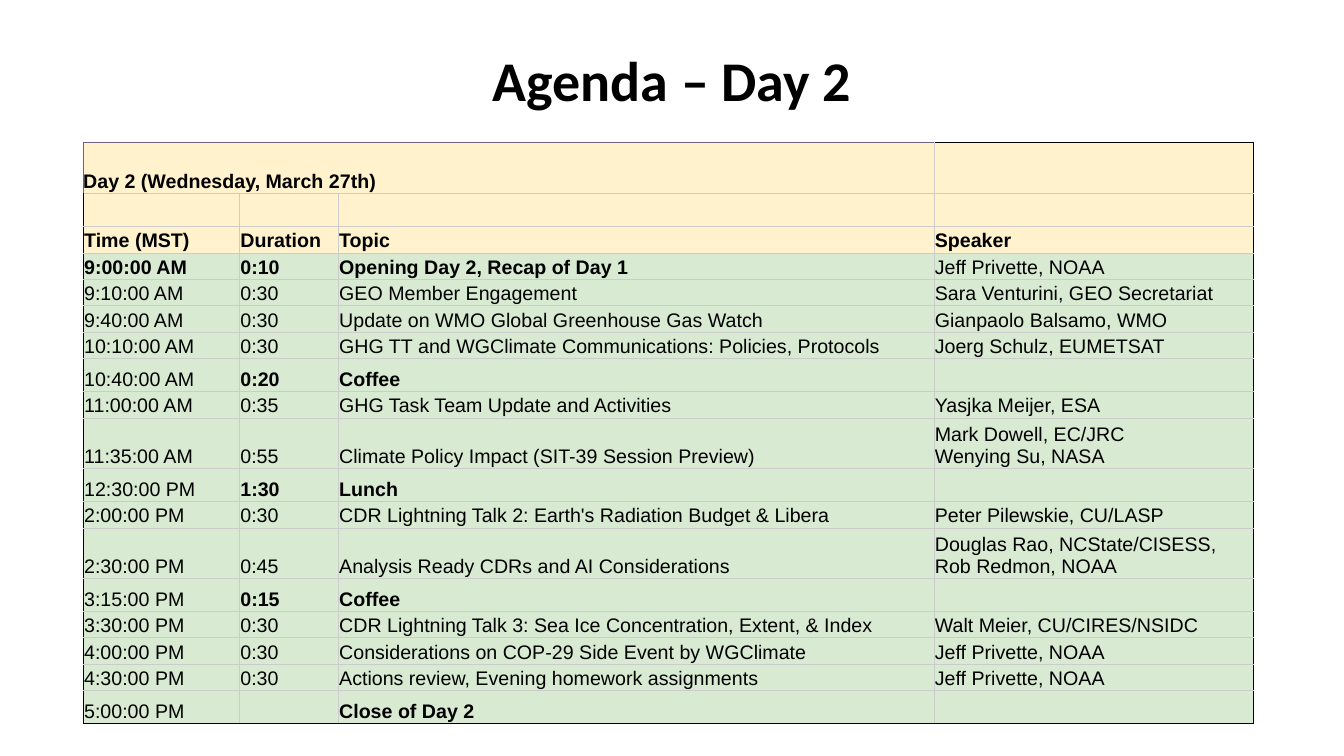
from lxml import etree
from pptx import Presentation
from pptx import util as u
from pptx.dml.color import RGBColor
from pptx.enum import text
from pptx.oxml.ns import qn

THEME = {
    "ink": "000000", "grid": "CCCCCC", "accent": "706286",
    "header": "FFF2CC", "body": "D9EAD3",
    "title_font": "Calibri", "table_font": "Arial",
    "title_size": 40, "table_size": 14,
}

SINGLE, BREAK, DOUBLE, BANNER = 18.9, 23.6, 36, 36.5
COL_WIDTHS = [111.6, 70.6, 425.5, 228.5]
AGENDA = [
    (BANNER, "Day 2 (Wednesday, March 27th)", "", "", ""),
    (BREAK, "", "", "", ""),
    (SINGLE, "Time (MST)", "Duration", "Topic", "Speaker"),
    (SINGLE, "9:00:00 AM", "0:10", "Opening Day 2, Recap of Day 1", "Jeff Privette, NOAA"),
    (SINGLE, "9:10:00 AM", "0:30", "GEO Member Engagement", "Sara Venturini, GEO Secretariat"),
    (SINGLE, "9:40:00 AM", "0:30", "Update on WMO Global Greenhouse Gas Watch", "Gianpaolo Balsamo, WMO"),
    (SINGLE, "10:10:00 AM", "0:30", "GHG TT and WGClimate Communications: Policies, Protocols",
     "Joerg Schulz, EUMETSAT"),
    (BREAK, "10:40:00 AM", "0:20", "Coffee", ""),
    (SINGLE, "11:00:00 AM", "0:35", "GHG Task Team Update and Activities", "Yasjka Meijer, ESA"),
    (DOUBLE, "11:35:00 AM", "0:55", "Climate Policy Impact (SIT-39 Session Preview)",
     "Mark Dowell, EC/JRC\vWenying Su, NASA"),
    (BREAK, "12:30:00 PM", "1:30", "Lunch", ""),
    (SINGLE, "2:00:00 PM", "0:30", "CDR Lightning Talk 2: Earth's Radiation Budget & Libera",
     "Peter Pilewskie, CU/LASP"),
    (DOUBLE, "2:30:00 PM", "0:45", "Analysis Ready CDRs and AI Considerations",
     "Douglas Rao, NCState/CISESS,\vRob Redmon, NOAA"),
    (BREAK, "3:15:00 PM", "0:15", "Coffee", ""),
    (SINGLE, "3:30:00 PM", "0:30", "CDR Lightning Talk 3: Sea Ice Concentration, Extent, & Index",
     "Walt Meier, CU/CIRES/NSIDC"),
    (SINGLE, "4:00:00 PM", "0:30", "Considerations on COP-29 Side Event by WGClimate", "Jeff Privette, NOAA"),
    (SINGLE, "4:30:00 PM", "0:30", "Actions review, Evening homework assignments", "Jeff Privette, NOAA"),
    (BREAK, "5:00:00 PM", "", "Close of Day 2", ""),
]


def style_run(r, font, size, bold):
    for name, value in {"name": font, "size": u.Pt(size), "bold": bold}.items():
        setattr(r.font, name, value)
    r.font.color.rgb = RGBColor.from_string(THEME["ink"])


def add_border(cell, side, color):
    ln = etree.SubElement(cell._tc.get_or_add_tcPr(), qn(f"a:ln{side}"), w=str(u.Pt(0.5)))
    fill = etree.SubElement(ln, qn("a:solidFill"))
    etree.SubElement(fill, qn("a:srgbClr"), val=color)


prs = Presentation()
prs.slide_width, prs.slide_height = u.Pt(960), u.Pt(540)
s = prs.slides.add_slide(prs.slide_layouts[6])

title = s.shapes.add_textbox(u.Pt(152), u.Pt(11.5), u.Pt(656), u.Pt(90))
tf = title.text_frame
tf.word_wrap = True
tf.vertical_anchor = text.MSO_ANCHOR.MIDDLE
p = tf.paragraphs[0]
p.alignment = text.PP_ALIGN.CENTER
r = p.add_run()
r.text = "Agenda – Day 2"
style_run(r, THEME["title_font"], THEME["title_size"], True)

last_row, last_col = len(AGENDA) - 1, len(COL_WIDTHS) - 1
frame = s.shapes.add_table(len(AGENDA), len(COL_WIDTHS), u.Pt(59.4), u.Pt(101.7),
                           u.Pt(sum(COL_WIDTHS)), u.Pt(sum(row[0] for row in AGENDA)))
table = frame.table
table.first_row = table.horz_banding = False
for column, width in zip(table.columns, COL_WIDTHS):
    column.width = u.Pt(width)

for i, (height, *entries) in enumerate(AGENDA):
    table.rows[i].height = u.Pt(height)
    for j, entry in enumerate(entries):
        cell = table.cell(i, j)
        pad = 0 if i == 0 else 0.7
        for name, value in {"margin_left": u.Pt(pad), "margin_right": u.Pt(pad),
                            "margin_top": u.Pt(0.7), "margin_bottom": u.Pt(0.7),
                            "vertical_anchor": text.MSO_ANCHOR.BOTTOM}.items():
            setattr(cell, name, value)

        grid, ink = THEME["grid"], THEME["ink"]
        left_edge = THEME["accent"] if i == 0 else ink
        top_edge = THEME["accent"] if j < last_col else ink
        add_border(cell, "L", left_edge if j == 0 else grid)
        add_border(cell, "R", ink if j == last_col else grid)
        add_border(cell, "T", top_edge if i == 0 else grid)
        add_border(cell, "B", ink if i == last_row else grid)
        cell.fill.solid()
        cell.fill.fore_color.rgb = RGBColor.from_string(THEME["header" if i < 3 else "body"])

        p = cell.text_frame.paragraphs[0]
        if not entry:
            p._p.get_or_add_endParaRPr().set("sz", str(THEME["table_size"] * 100))
            continue
        p.text = entry
        is_break = not entries[last_col] and j in (1, 2)
        bold = i < 3 or (i == 3 and j < last_col) or is_break
        for r in p.runs:
            style_run(r, THEME["table_font"], THEME["table_size"], bold)
        for br in p._p.findall(qn("a:br")):
            etree.SubElement(br, qn("a:rPr"), sz=str(THEME["table_size"] * 100))

table.cell(0, 0).merge(table.cell(0, 2))

prs.save("out.pptx")
